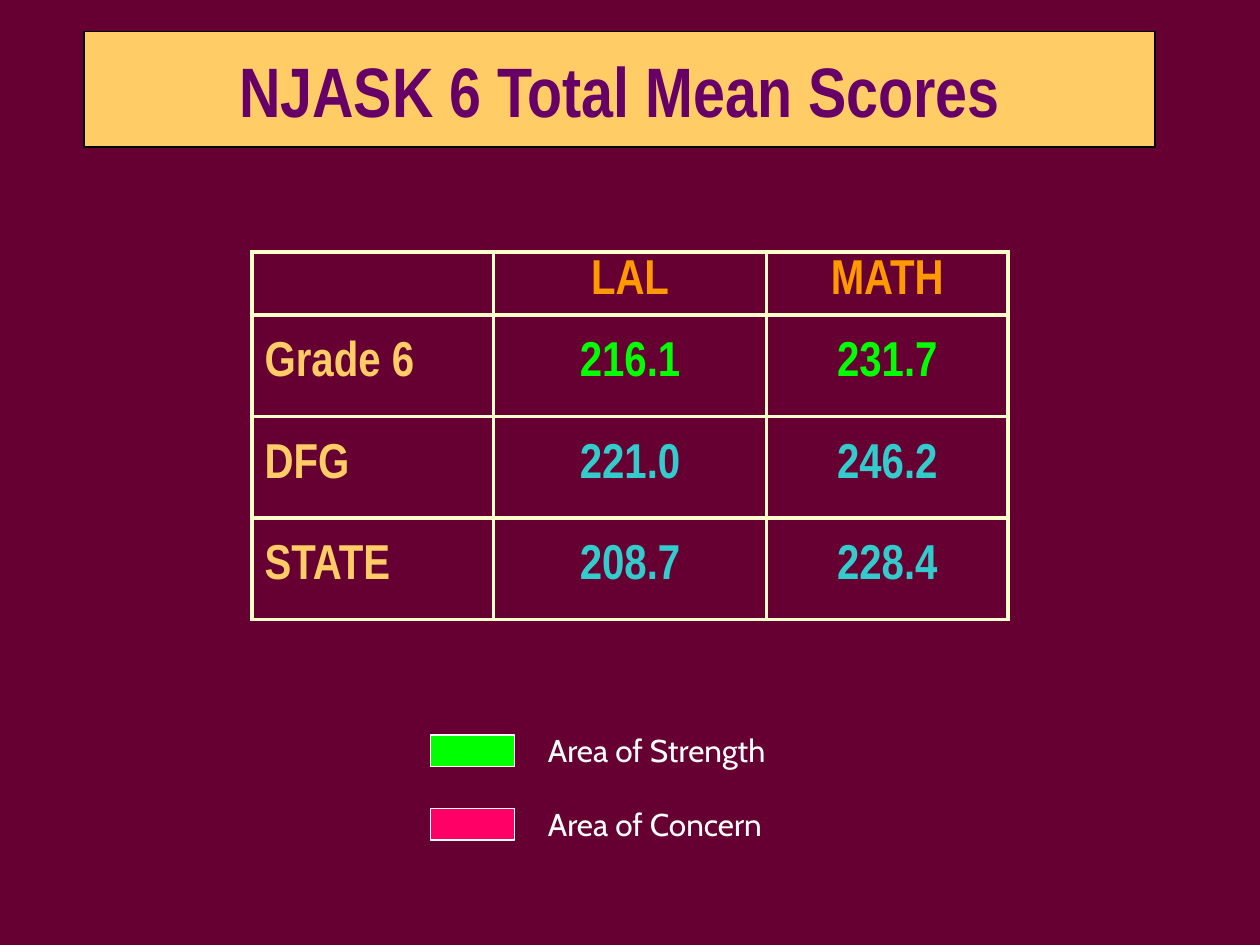
"""Build the NJASK 6 total mean scores slide."""
import pptx
import pptx.dml.color
import pptx.enum.shapes
import pptx.enum.text
import pptx.oxml
import pptx.oxml.ns
import pptx.util

Pt = pptx.util.Pt
RGBColor = pptx.dml.color.RGBColor
Align = pptx.enum.text.PP_ALIGN
Anchor = pptx.enum.text.MSO_ANCHOR

MAROON = RGBColor(0x66, 0x00, 0x33)
PURPLE = RGBColor(0x66, 0x00, 0x66)
GOLD = RGBColor(0xFF, 0xCC, 0x66)
ORANGE = RGBColor(0xFF, 0x99, 0x00)
GREEN = RGBColor(0x00, 0xFF, 0x00)
TEAL = RGBColor(0x33, 0xCC, 0xCC)
PINK = RGBColor(0xFF, 0x00, 0x66)
CREAM = RGBColor(0xFF, 0xFF, 0xCC)
WHITE = RGBColor(0xFF, 0xFF, 0xFF)
BLACK = RGBColor(0x00, 0x00, 0x00)


def add_box(left, top, width, height, fill, line, line_width):
    shape = slide.shapes.add_shape(
        pptx.enum.shapes.MSO_SHAPE.RECTANGLE, Pt(left), Pt(top), Pt(width), Pt(height))
    shape.shadow.inherit = False
    shape.fill.solid()
    shape.fill.fore_color.rgb = fill
    shape.line.color.rgb = line
    shape.line.width = Pt(line_width)
    return shape


def format_runs(paragraph, name, size, color, bold):
    for run in paragraph.runs:
        run.font.name = name
        run.font.size = Pt(size)
        run.font.color.rgb = color
        run.font.bold = bold


presentation = pptx.Presentation()
presentation.slide_width = Pt(720)
presentation.slide_height = Pt(540)
slide = presentation.slides.add_slide(presentation.slide_layouts[6])
slide.background.fill.solid()
slide.background.fill.fore_color.rgb = MAROON

title = add_box(48, 18, 612, 66, GOLD, BLACK, 0.75)
title.text_frame.text = "NJASK 6 Total Mean Scores"
title.text_frame.word_wrap = True
title.text_frame.vertical_anchor = Anchor.MIDDLE
title.text_frame.paragraphs[0].alignment = Align.CENTER
format_runs(title.text_frame.paragraphs[0], "Arial Narrow", 40, PURPLE, True)

scores = [
    (["", "LAL", "MATH"], ORANGE),
    (["Grade 6", "216.1", "231.7"], GREEN),
    (["DFG", "221.0", "246.2"], TEAL),
    (["STATE", "208.7", "228.4"], TEAL),
]
table = slide.shapes.add_table(4, 3, Pt(144), Pt(144), Pt(432), Pt(210)).table
table.first_row = False
table.horz_banding = False
for column, width in zip(table.columns, [138, 156, 138]):
    column.width = Pt(width)
for row, height in zip(table.rows, [36, 58, 58, 58]):
    row.height = Pt(height)

for row_index, (texts, value_color) in enumerate(scores):
    for column_index, text in enumerate(texts):
        cell = table.cell(row_index, column_index)
        cell.vertical_anchor = Anchor.MIDDLE
        cell.text_frame.text = text
        paragraph = cell.text_frame.paragraphs[0]
        paragraph.line_spacing = 0.8
        paragraph.alignment = Align.CENTER if column_index else Align.LEFT
        format_runs(paragraph, "Arial Narrow", 28, value_color if column_index else GOLD, True)
        properties = cell._tc.get_or_add_tcPr()
        for side in ("lnL", "lnR", "lnT", "lnB"):
            properties.append(pptx.oxml.parse_xml(
                f'<a:{side} {pptx.oxml.ns.nsdecls("a")} w="{Pt(2.25)}">'
                f'<a:solidFill><a:srgbClr val="{CREAM}"/></a:solidFill></a:{side}>'))
        cell.fill.solid()
        cell.fill.fore_color.rgb = MAROON

legend = slide.shapes.add_textbox(Pt(306), Pt(414), Pt(156), Pt(72))
legend.text_frame.word_wrap = True
legend.text_frame.text = "Area of Strength\nArea of Concern"
legend.text_frame.paragraphs[1].space_before = Pt(21)
for paragraph in legend.text_frame.paragraphs:
    format_runs(paragraph, "Cabin", 18, WHITE, False)

for top, color in [(420, GREEN), (462, PINK)]:
    add_box(246, top, 48, 18, color, WHITE, 1)

presentation.save("out.pptx")
